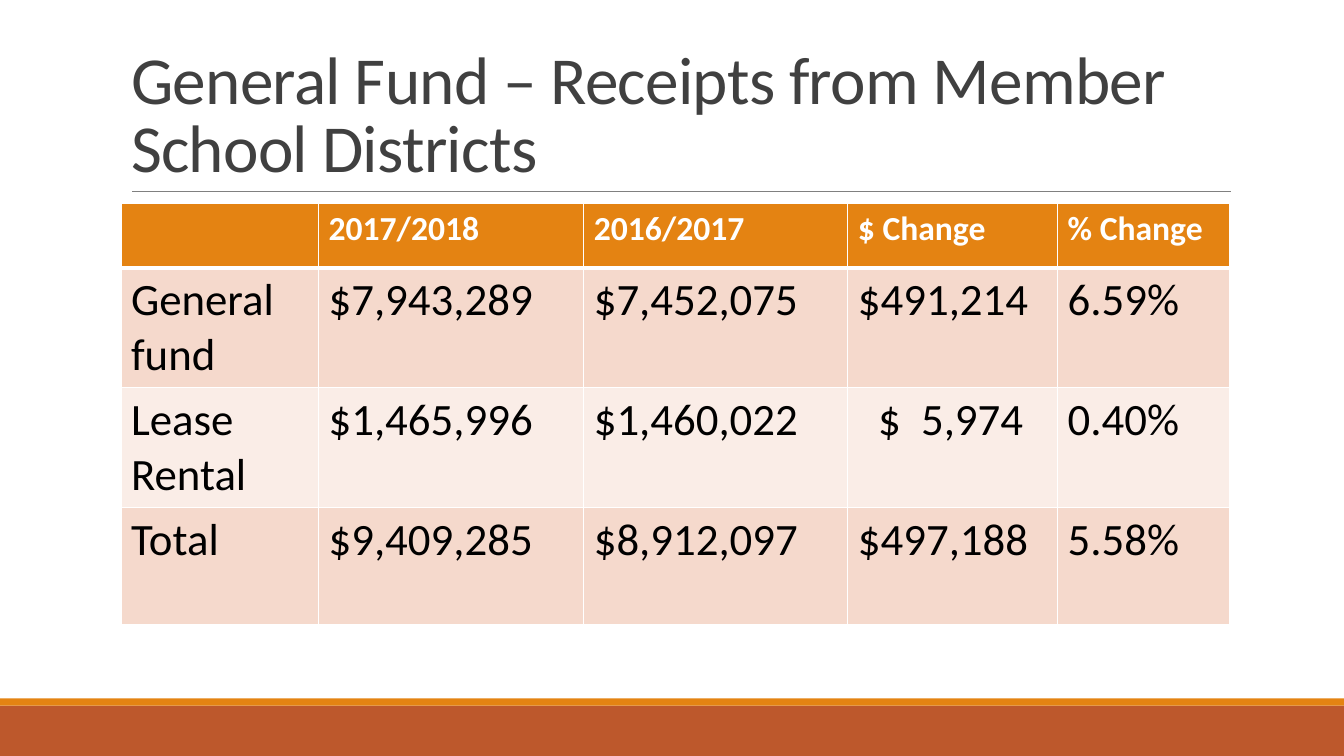
"""Build the slide on general fund receipts from member school districts."""
from typing import NamedTuple

from lxml.etree import SubElement
from pptx import Presentation
from pptx.dml.color import RGBColor
from pptx.enum.shapes import MSO_CONNECTOR, MSO_SHAPE
from pptx.enum.text import MSO_ANCHOR, MSO_AUTO_SIZE, PP_ALIGN
from pptx.oxml import parse_xml
from pptx.oxml.ns import nsdecls, qn
from pptx.slide import Slide
from pptx.table import _Cell
from pptx.text.text import TextFrame
from pptx.util import Emu, Pt

EMU_PER_PX = 9144
PAGE_WIDTH, PAGE_HEIGHT = 1333, 750
ORANGE, RUST, WHITE = "E48312", "BD582C", "FFFFFF"
COLUMN_WIDTHS = (196, 263, 262, 208, 171)


class Band(NamedTuple):
    top: int
    height: int
    color: str


class TableRow(NamedTuple):
    height: int
    fill: str
    values: tuple[str, ...]
    indents: tuple[int, ...] = (0, 0, 0, 0, 0)


BANDS = (Band(700, 50, RUST), Band(693, 7, ORANGE))
ROWS = (
    TableRow(64, ORANGE, ("", "2017/2018", "2016/2017", "$ Change", "% Change")),
    TableRow(118, "F5D9CC", ("General fund", "$7,943,289", "$7,452,075", "$491,214", "6.59%")),
    TableRow(118, "FAEDE7", ("Lease Rental", "$1,465,996", "$1,460,022", "$  5,974", "0.40%"),
             (0, 0, 0, 20, 0)),
    TableRow(116, "F5D9CC", ("Total", "$9,409,285", "$8,912,097", "$497,188", "5.58%")),
)


def px(length: int) -> Emu:
    return Emu(length * EMU_PER_PX)


def rgb(color: str) -> RGBColor:
    return RGBColor.from_string(color)


def write(frame: TextFrame, text: str, *, size: int, color: str, bold: bool = False,
          line_spacing: float = 1.0, tracking: int = 0) -> None:
    para = frame.paragraphs[0]
    para.alignment = PP_ALIGN.LEFT
    para.line_spacing = line_spacing
    span = para.add_run()
    span.text = text
    span.font.name = "Calibri"
    span.font.size = Pt(size)
    span.font.bold = bold
    span.font.color.rgb = rgb(color)
    span.font._element.set("spc", str(tracking))


def draw_band(page: Slide, band: Band) -> None:
    box = page.shapes.add_shape(MSO_SHAPE.RECTANGLE, 0, px(band.top),
                                px(PAGE_WIDTH), px(band.height))
    box.shadow.inherit = False
    box.fill.solid()
    box.fill.fore_color.rgb = rgb(band.color)
    box.line.fill.background()


def draw_rule(page: Slide) -> None:
    rule = page.shapes.add_connector(MSO_CONNECTOR.STRAIGHT, px(131), px(190), px(1221), px(190))
    rule.line.color.rgb = rgb("808080")
    rule.line.width = Pt(0.5)
    SubElement(rule._element.spPr, qn("a:effectLst"))


def draw_title(page: Slide) -> None:
    title = page.shapes.title
    title.left, title.top, title.width, title.height = px(120), px(31), px(1100), px(159)
    frame = title.text_frame
    frame.word_wrap = True
    frame.auto_size = MSO_AUTO_SIZE.NONE
    frame.vertical_anchor = MSO_ANCHOR.BOTTOM
    write(frame, "General Fund – Receipts from Member School Districts",
          size=48, color="404040", line_spacing=0.85, tracking=-50)


def set_borders(cell: _Cell, top: int, bottom: int) -> None:
    properties = cell._tc.get_or_add_tcPr()
    widths = {"lnL": 1, "lnR": 1, "lnT": top, "lnB": bottom}
    for position, (side, width) in enumerate(widths.items()):
        border = parse_xml(
            f'<a:{side} {nsdecls("a")} w="{Pt(width)}"><a:solidFill>'
            f'<a:srgbClr val="{WHITE}"/></a:solidFill></a:{side}>')
        properties.insert(position, border)


def draw_table(page: Slide) -> None:
    frame = page.shapes.add_table(len(ROWS), len(COLUMN_WIDTHS), px(120), px(202),
                                  px(sum(COLUMN_WIDTHS)), px(sum(row.height for row in ROWS)))
    table = frame.table
    for column, width in zip(table.columns, COLUMN_WIDTHS):
        column.width = px(width)
    for index, row in enumerate(ROWS):
        table.rows[index].height = px(row.height)
        header = index == 0
        for cell, text, indent in zip(table.rows[index].cells, row.values, row.indents):
            cell.fill.solid()
            cell.fill.fore_color.rgb = rgb(row.fill)
            cell.margin_left, cell.margin_right = px(10 + indent), px(10)
            cell.margin_top = cell.margin_bottom = px(5)
            set_borders(cell, top=3 if index == 1 else 1, bottom=3 if header else 1)
            if text:
                write(cell.text_frame, text, size=24 if header else 32,
                      color=WHITE if header else "000000", bold=header)


def main() -> None:
    deck = Presentation()
    deck.slide_width, deck.slide_height = px(PAGE_WIDTH), px(PAGE_HEIGHT)
    page = deck.slides.add_slide(deck.slide_layouts.get_by_name("Title Only"))
    for band in BANDS:
        draw_band(page, band)
    draw_rule(page)
    draw_title(page)
    draw_table(page)
    deck.save("out.pptx")


if __name__ == "__main__":
    main()
